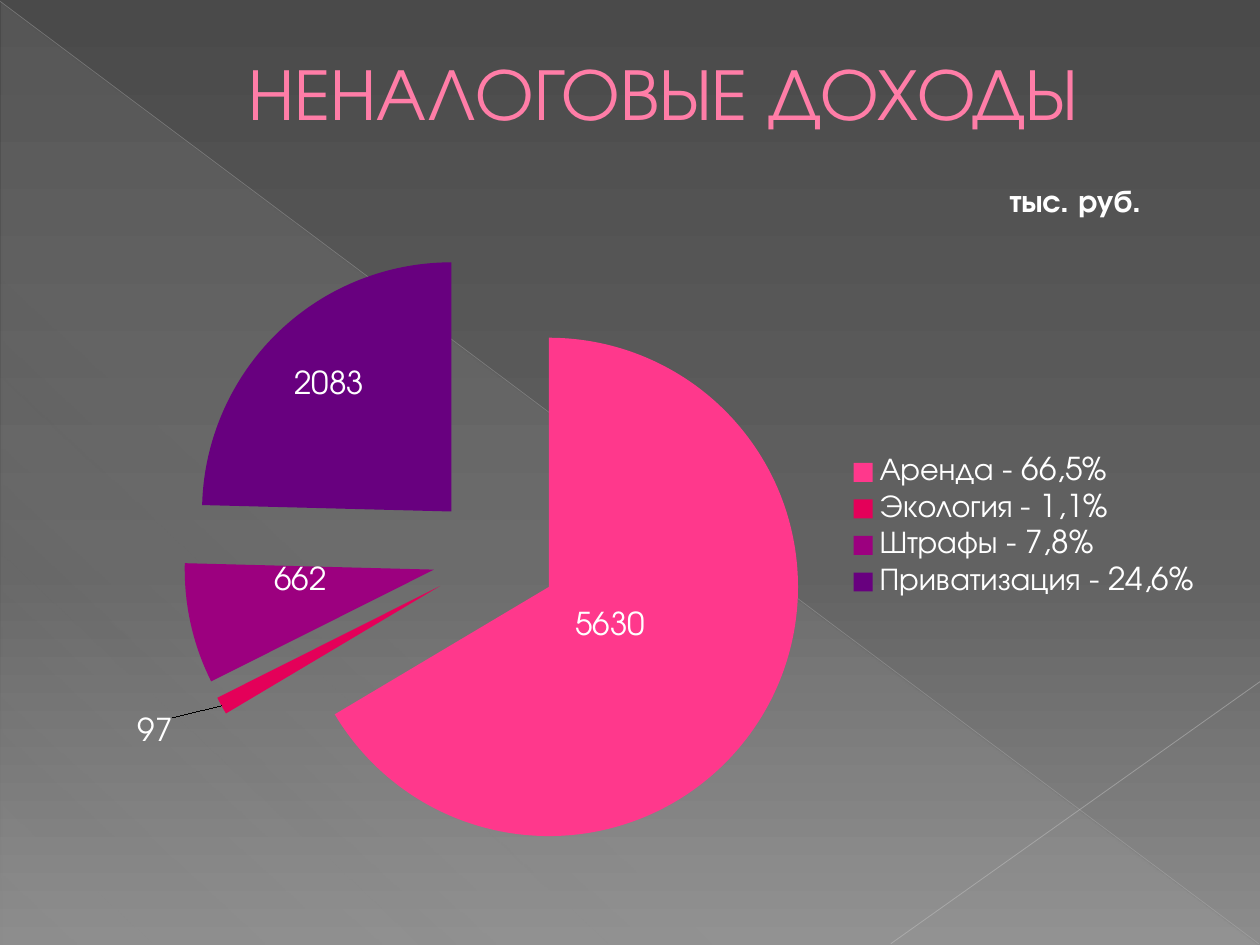
from dataclasses import dataclass

from lxml.etree import SubElement
from pptx import Presentation
from pptx.chart.data import CategoryChartData
from pptx.dml.color import RGBColor
from pptx.enum.chart import XL_CHART_TYPE as ChartType
from pptx.enum.chart import XL_LABEL_POSITION as LabelPosition
from pptx.enum.chart import XL_LEGEND_POSITION as LegendPosition
from pptx.enum.shapes import MSO_CONNECTOR as Connector
from pptx.enum.shapes import MSO_SHAPE as Shape
from pptx.enum.text import MSO_ANCHOR as Anchor
from pptx.enum.text import PP_ALIGN as Align
from pptx.oxml import parse_xml
from pptx.oxml.ns import nsdecls, qn
from pptx.util import Inches, Pt


@dataclass(frozen=True)
class Theme:
    font: str = "TeX Gyre Adventor"
    title_size: int = 42
    chart_size: int = 18
    title: str = "FF7DA7"
    title_outline: str = "B12761"
    text: str = "FFFFFF"
    facet: str = "D2D2D2"


@dataclass(frozen=True)
class Stop:
    position: int
    color: str
    opacity: int = 100


@dataclass(frozen=True)
class Ray:
    start: tuple[float, float]
    end: tuple[float, float]
    color: str
    width: float
    opacity: int


@dataclass(frozen=True)
class Slice:
    label: str
    value: int
    color: str
    label_shift: tuple[float, float]


THEME = Theme()
BACKDROP = [Stop(0, "4A4A4A"), Stop(60, "626262"), Stop(100, "8C8C8C")]
FACET = [Stop(0, THEME.facet, 10), Stop(70, THEME.facet, 8), Stop(100, THEME.facet, 1)]
RAYS = [
    Ray((0, 0.01), (9.99, 7.49), "BFBFBF", 0.39, 35),
    Ray((10, 5.41), (7.07, 7.49), "C6C6C6", 0.47, 45),
]
SLICES = [
    Slice("Аренда - 66,5%", 5630, "FF388C", (-0.04, -0.03)),
    Slice("Экология - 1,1%", 97, "E40059", (-0.15, 0.12)),
    Slice("Штрафы - 7,8%", 662, "9C007F", (-0.01, -0.02)),
    Slice("Приватизация - 24,6%", 2083, "68007F", (-0.03, -0.05)),
]


def set_gradient(fill, properties, stops: list[Stop], angle: int) -> None:
    fill.gradient()
    gradient = properties.find(qn("a:gradFill"))
    for child in list(gradient):
        gradient.remove(child)
    stop_list = SubElement(gradient, qn("a:gsLst"))
    for stop in stops:
        node = SubElement(stop_list, qn("a:gs"), pos=str(stop.position * 1000))
        color = SubElement(node, qn("a:srgbClr"), val=stop.color)
        if stop.opacity < 100:
            SubElement(color, qn("a:alpha"), val=str(stop.opacity * 1000))
    SubElement(gradient, qn("a:lin"), ang=str(angle * 60000), scaled="0")


def add_facet(page) -> None:
    facet = page.shapes.add_shape(
        Shape.RIGHT_TRIANGLE, Inches(0.01), Inches(0.02), Inches(9.98), Inches(7.48)
    )
    facet.shadow.inherit = False
    set_gradient(facet.fill, facet._element.spPr, FACET, 133)
    facet.line.fill.background()


def add_ray(page, ray: Ray) -> None:
    points = [Inches(value) for value in ray.start + ray.end]
    line = page.shapes.add_connector(Connector.STRAIGHT, *points)
    line.line.width = Pt(ray.width)
    line.line.color.rgb = RGBColor.from_string(ray.color)
    properties = line._element.spPr
    color = next(properties.iter(qn("a:srgbClr")))
    SubElement(color, qn("a:alpha"), val=str(ray.opacity * 1000))
    SubElement(properties, qn("a:effectLst"))


def style_font(font, size: int, color: str) -> None:
    font.name = THEME.font
    font.size = Pt(size)
    font.color.rgb = RGBColor.from_string(color)


def add_title(page) -> None:
    box = page.shapes.add_textbox(Inches(0.5), Inches(0.29), Inches(9), Inches(0.86))
    frame = box.text_frame
    frame.word_wrap = True
    frame.vertical_anchor = Anchor.MIDDLE
    para = frame.paragraphs[0]
    para.alignment = Align.CENTER
    para._p.get_or_add_pPr().set("marL", str(Inches(0.53)))
    span = para.add_run()
    span.text = "НЕНАЛОГОВЫЕ ДОХОДЫ"
    style_font(span.font, THEME.title_size, THEME.title)
    outline = parse_xml(
        f'<a:ln {nsdecls("a")} w="{Pt(0.5)}"><a:solidFill>'
        f'<a:srgbClr val="{THEME.title_outline}"/></a:solidFill></a:ln>'
    )
    span._r.get_or_add_rPr().insert(0, outline)


def make_layout(**settings):
    layout = parse_xml(f'<c:layout {nsdecls("c")}><c:manualLayout/></c:layout>')
    for name, value in settings.items():
        SubElement(layout[0], qn(f"c:{name}"), val=str(value))
    return layout


def set_layout(parent, index: int, **settings) -> None:
    for old in parent.findall(qn("c:layout")):
        parent.remove(old)
    parent.insert(index, make_layout(**settings))


def add_income_chart(page) -> None:
    data = CategoryChartData()
    data.categories = [item.label for item in SLICES]
    data.add_series("Series 1", [item.value for item in SLICES])
    chart = page.shapes.add_chart(
        ChartType.PIE, Inches(0.35), Inches(1.31), Inches(9.29), Inches(5.75), data
    ).chart
    style_font(chart.font, THEME.chart_size, THEME.text)

    span = chart.chart_title.text_frame.paragraphs[0].add_run()
    span.text = "тыс. руб."
    style_font(span.font, THEME.chart_size, THEME.text)
    span.font.bold = True
    set_layout(chart.chart_title._element, 1, xMode="edge", yMode="edge", x=0.82, y=0.02)

    chart.has_legend = True
    chart.legend.position = LegendPosition.RIGHT
    chart.legend.include_in_layout = False
    style_font(chart.legend.font, THEME.chart_size, THEME.text)

    plot = chart.plots[0]
    plot.vary_by_categories = True
    set_layout(
        plot._element.getparent(), 0, layoutTarget="inner",
        xMode="edge", yMode="edge", x=0.01, y=0.11, w=0.75, h=0.86,
    )
    series = plot.series[0]
    labels = series.data_labels
    labels.show_value = True
    labels.position = LabelPosition.CENTER
    style_font(labels.font, THEME.chart_size, THEME.text)
    for index, item in enumerate(SLICES):
        point = series.points[index]
        point.format.fill.solid()
        point.format.fill.fore_color.rgb = RGBColor.from_string(item.color)
        point.data_label.position = LabelPosition.CENTER
        shift_x, shift_y = item.label_shift
        label = labels._element.findall(qn("c:dLbl"))[index]
        set_layout(label, 1, x=shift_x, y=shift_y)
    first_point = series._element.find(qn("c:dPt"))
    first_point.addprevious(parse_xml(f'<c:explosion {nsdecls("c")} val="25"/>'))


def main() -> None:
    deck = Presentation()
    deck.slide_width, deck.slide_height = Inches(10), Inches(7.5)
    page = deck.slides.add_slide(deck.slide_layouts[6])
    fill = page.background.fill
    set_gradient(fill, page._element.cSld.find(qn("p:bg")).find(qn("p:bgPr")), BACKDROP, 90)
    add_facet(page)
    for ray in RAYS:
        add_ray(page, ray)
    add_title(page)
    add_income_chart(page)
    deck.save("out.pptx")


if __name__ == "__main__":
    main()
